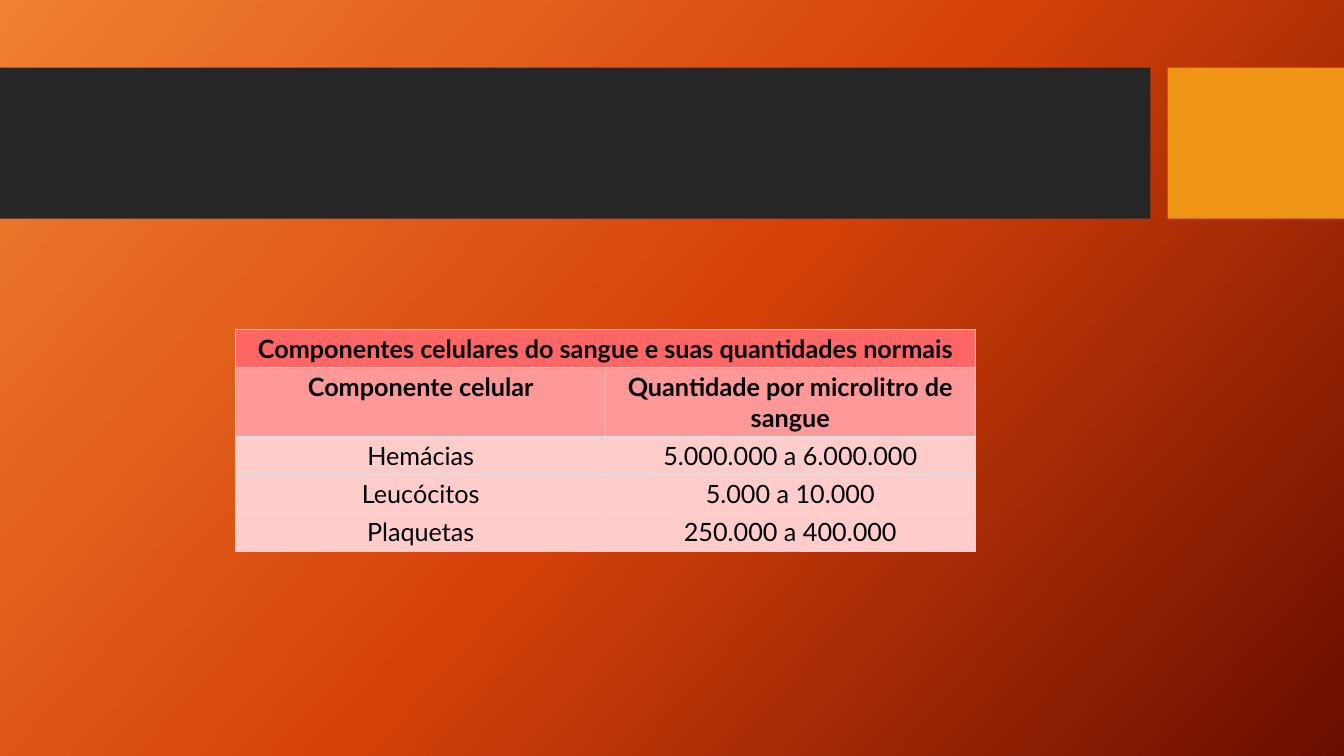
from copy import deepcopy
from dataclasses import dataclass

from lxml.etree import SubElement
from pptx import Presentation
from pptx.dml.color import RGBColor
from pptx.enum.shapes import MSO_SHAPE
from pptx.enum.text import PP_ALIGN
from pptx.oxml.ns import qn
from pptx.util import Inches, Pt


@dataclass(frozen=True)
class Theme:
    font: str = "Lato"
    size: int = 18
    text: str = "000000"
    band: str = "262626"
    accent: str = "F09415"
    border: str = "DFDFDF"
    border_width: float = 0.75
    title_row: str = "FF6666"
    heading_row: str = "FF9999"
    body_row: str = "FFCCCC"
    gradient: tuple = ((0, "F18031"), (0.5, "D54209"), (1, "6A0D00"))
    gradient_angle: int = 42


class SlideBuilder:
    def __init__(self, slide, theme):
        self.s = slide
        self.theme = theme

    def background(self):
        fill = self.s.background.fill
        fill.gradient()
        # python-pptx counts the angle anticlockwise
        fill.gradient_angle = 360 - self.theme.gradient_angle
        stops = next(self.s._element.iter(qn("a:gsLst")))
        stops.insert(1, deepcopy(stops[0]))
        for stop, (position, color) in zip(fill.gradient_stops, self.theme.gradient):
            stop.position = position
            stop.color.rgb = RGBColor.from_string(color)

    def block(self, left, top, width, height, color):
        sp = self.s.shapes.add_shape(MSO_SHAPE.RECTANGLE, Inches(left), Inches(top),
                                     Inches(width), Inches(height))
        sp.shadow.inherit = False
        sp.fill.solid()
        sp.fill.fore_color.rgb = RGBColor.from_string(color)
        sp.line.fill.background()

    def cell(self, cell, text, color, bold):
        cell.margin_left = cell.margin_right = Inches(0.07)
        cell.margin_top = cell.margin_bottom = Inches(0.04)
        cell.fill.solid()
        cell.fill.fore_color.rgb = RGBColor.from_string(color)
        self.cell_borders(cell)
        p = cell.text_frame.paragraphs[0]
        p.text = text
        p.alignment = PP_ALIGN.CENTER
        p.font.name = self.theme.font
        p.font.size = Pt(self.theme.size)
        p.font.bold = bold
        p.font.color.rgb = RGBColor.from_string(self.theme.text)

    def cell_borders(self, cell):
        tc_pr = cell._tc.get_or_add_tcPr()
        for i, side in enumerate(("lnL", "lnR", "lnT", "lnB")):
            ln = SubElement(tc_pr, qn(f"a:{side}"), w=str(Pt(self.theme.border_width)))
            SubElement(SubElement(ln, qn("a:solidFill")), qn("a:srgbClr"),
                       val=self.theme.border)
            tc_pr.insert(i, ln)

    def table(self, left, top, width, rows, heights):
        shape = self.s.shapes.add_table(len(rows), 2, Inches(left), Inches(top),
                                        Inches(width), Inches(sum(heights)))
        table = shape.table
        table.horz_banding = False
        fills = [self.theme.title_row, self.theme.heading_row]
        for r, (texts, height) in enumerate(zip(rows, heights)):
            table.rows[r].height = Inches(height)
            color = fills[r] if r < len(fills) else self.theme.body_row
            for c, text in enumerate(texts):
                self.cell(table.cell(r, c), text, color, bold=r < len(fills))
        table.cell(0, 0).merge(table.cell(0, 1))


def main():
    prs = Presentation()
    prs.slide_width, prs.slide_height = Inches(13.33), Inches(7.5)
    theme = Theme()
    slide = SlideBuilder(prs.slides.add_slide(prs.slide_layouts[6]), theme)

    # Background and header band
    slide.background()
    slide.block(0, 0.67, 11.41, 1.5, theme.band)
    slide.block(11.58, 0.67, 1.75, 1.5, theme.accent)

    # Blood cell table
    rows = [
        ("Componentes celulares do sangue e suas quantidades normais", ""),
        ("Componente celular", "Quantidade por microlitro de sangue"),
        ("Hemácias", "5.000.000 a 6.000.000"),
        ("Leucócitos", "5.000 a 10.000"),
        ("Plaquetas", "250.000 a 400.000"),
    ]
    slide.table(2.34, 3.27, 7.33, rows, [0.38, 0.68, 0.38, 0.38, 0.38])

    prs.save("out.pptx")


if __name__ == "__main__":
    main()
